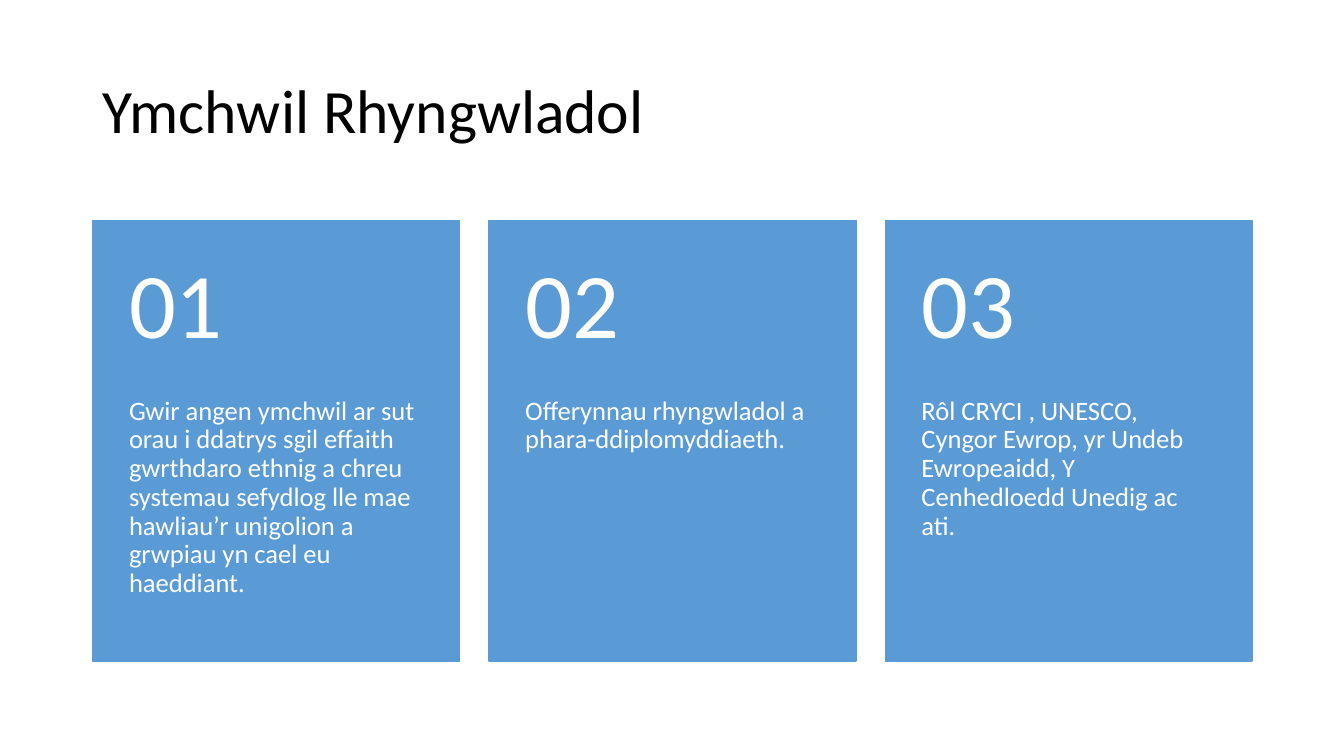
import pptx
import pptx.dml.color
import pptx.enum.shapes
import pptx.enum.text
import pptx.util
from pptx.util import Inches

# Content
TITLE = "Ymchwil Rhyngwladol"
CARDS = [
    ("01", "Gwir angen ymchwil ar sut orau i ddatrys sgil effaith gwrthdaro "
           "ethnig a chreu systemau sefydlog lle mae hawliau’r unigolion a "
           "grwpiau yn cael eu haeddiant."),
    ("02", "Offerynnau rhyngwladol a phara-ddiplomyddiaeth."),
    ("03", "Rôl CRYCI , UNESCO, Cyngor Ewrop, yr Undeb Ewropeaidd, "
           "Y Cenhedloedd Unedig ac ati."),
]

# Style
FONT = "Calibri"
BLACK = pptx.dml.color.RGBColor(0x00, 0x00, 0x00)
WHITE = pptx.dml.color.RGBColor(0xFF, 0xFF, 0xFF)
BLUE = pptx.dml.color.RGBColor(0x5B, 0x9B, 0xD5)
TOP = pptx.enum.text.MSO_ANCHOR.TOP
MIDDLE = pptx.enum.text.MSO_ANCHOR.MIDDLE

# Layout in inches
LEFT = 0.92
CARD_TOP, CARD_WIDTH, CARD_HEIGHT = 2.19, 3.64, 4.37
CARD_STEP = 3.93
NUMBER_HEIGHT = 1.75
PADDING = 0.36


def add_text(page, text, place, size, color, anchor, insets):
    """Add a text box; insets run left, top, right, bottom."""
    box = page.shapes.add_textbox(*(Inches(length) for length in place))
    frame = box.text_frame
    frame.word_wrap = True
    frame.vertical_anchor = anchor
    (frame.margin_left, frame.margin_top,
     frame.margin_right, frame.margin_bottom) = (Inches(i) for i in insets)
    para = frame.paragraphs[0]
    para.line_spacing = 0.9
    span = para.add_run()
    span.text = text
    span.font.name = FONT
    span.font.size = pptx.util.Pt(size)
    span.font.color.rgb = color


def add_card(page, left, number, text):
    """Add a blue card with its number above its text."""
    card = page.shapes.add_shape(
        pptx.enum.shapes.MSO_SHAPE.RECTANGLE, Inches(left), Inches(CARD_TOP),
        Inches(CARD_WIDTH), Inches(CARD_HEIGHT))
    card.shadow.inherit = False
    card.fill.solid()
    card.fill.fore_color.rgb = BLUE
    card.line.color.rgb = BLUE
    card.line.width = pptx.util.Pt(1)

    text_place = (left, CARD_TOP + NUMBER_HEIGHT,
                  CARD_WIDTH, CARD_HEIGHT - NUMBER_HEIGHT)
    add_text(page, text, text_place, 19, WHITE, TOP,
             (PADDING, 0, PADDING, PADDING))
    number_place = (left, CARD_TOP, CARD_WIDTH, NUMBER_HEIGHT)
    add_text(page, number, number_place, 66, WHITE, MIDDLE,
             (PADDING, PADDING / 2, PADDING, PADDING / 2))


def main():
    deck = pptx.Presentation()
    deck.slide_width, deck.slide_height = Inches(13.33), Inches(7.5)
    page = deck.slides.add_slide(deck.slide_layouts[6])

    # Title
    add_text(page, TITLE, (LEFT, 0.4, 11.5, 1.45), 44, BLACK, MIDDLE,
             (0.1, 0.05, 0.1, 0.05))

    # Cards
    for index, (number, text) in enumerate(CARDS):
        add_card(page, LEFT + index * CARD_STEP, number, text)

    deck.save("out.pptx")


if __name__ == "__main__":
    main()
